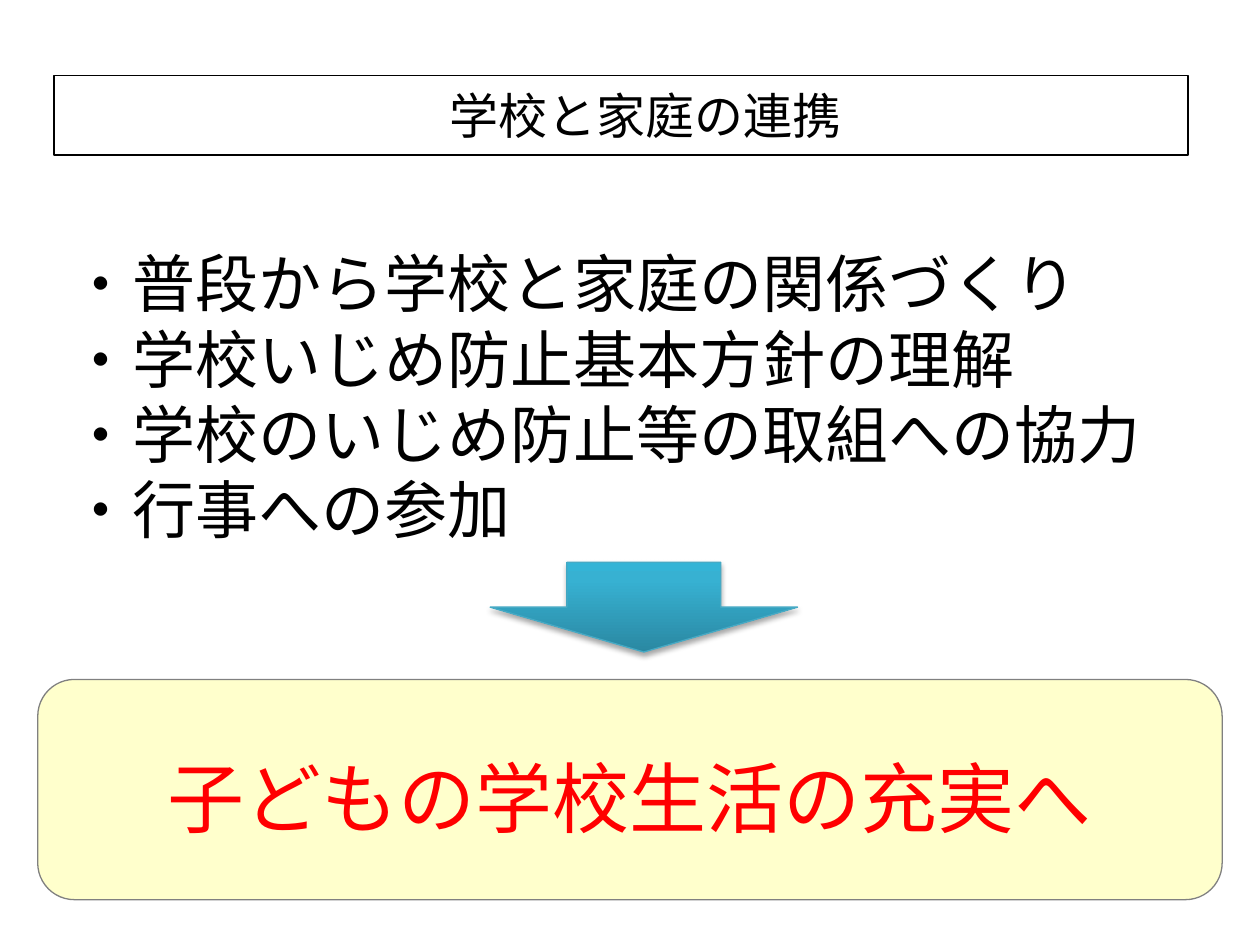
from lxml.etree import SubElement as Sub
from pptx import Presentation
from pptx.dml.color import RGBColor as Rgb
from pptx.enum.shapes import MSO_SHAPE as Kind
from pptx.enum.text import MSO_ANCHOR as Anchor, PP_ALIGN as Align
from pptx.oxml.ns import qn
from pptx.util import Inches, Pt

WIDE, HIGH = Inches(10), Inches(7.5)
FONT = "Noto Sans CJK JP"
HUE = {
    "ink": "000000", "red": "FF0000", "cream": "FFFFCC", "gray": "808080",
    "deep": "2A88A2", "mid": "37B1D2", "light": "34B4D6", "edge": "46AAC5",
}
ITEMS = [
    "・普段から学校と家庭の関係づくり",
    "・学校いじめ防止基本方針の理解",
    "・学校のいじめ防止等の取組への協力",
    "・行事への参加",
]


def tint(name):
    """Return the named colour."""
    return Rgb.from_string(HUE[name])


def shape(slide, kind, box, fill=None, line=None):
    """Add a shape in a box given as shares of the slide."""
    x, y, w, h = box
    item = slide.shapes.add_shape(
        kind, int(x * WIDE), int(y * HIGH), int(w * WIDE), int(h * HIGH))
    item.shadow.inherit = False
    if fill:
        item.fill.solid()
        item.fill.fore_color.rgb = tint(fill)
    else:
        item.fill.background()
    if line:
        item.line.color.rgb = tint(line)
        item.line.width = Pt(0.75)
    else:
        item.line.fill.background()
    return item


def write(item, rows, size, pitch, color="ink", align=Align.CENTER, anchor=Anchor.TOP):
    """Fill a shape with paragraphs of one style."""
    frame = item.text_frame
    frame.word_wrap = True
    frame.vertical_anchor = anchor
    frame.text = "\n".join(rows)
    for para in frame.paragraphs:
        para.alignment = align
        para.line_spacing = Pt(pitch)
        para.font.size = Pt(size)
        para.font.color.rgb = tint(color)
        para.font.name = FONT
        Sub(para._p.pPr.find(qn("a:defRPr")), qn("a:ea"), typeface=FONT)


def title(slide, box):
    """Place the framed heading."""
    item = shape(slide, Kind.RECTANGLE, box, line="ink")
    write(item, ["　学校と家庭の連携"], 28, 36)


def points(slide, box):
    """Place the list of actions."""
    item = shape(slide, Kind.ROUNDED_RECTANGLE, box)
    item.text_frame.margin_top = Inches(0.09)
    write(item, ITEMS, 36, 43, align=Align.LEFT)


def goal(slide, box):
    """Place the closing message."""
    item = shape(slide, Kind.ROUNDED_RECTANGLE, box, "cream", "gray")
    write(item, ["子どもの学校生活の充実へ"], 44, 61, "red", anchor=Anchor.MIDDLE)


def arrow(slide, box):
    """Place the shaded arrow with its soft shadow."""
    item = shape(slide, Kind.DOWN_ARROW, box, line="edge")
    item.fill.gradient()
    item.fill.gradient_angle = 90
    props = item._element.spPr
    stops = props.find(qn("a:gradFill")).find(qn("a:gsLst"))
    for old in list(stops):
        stops.remove(old)
    for name, pos in (("deep", 0), ("mid", 80), ("light", 100)):
        stop = Sub(stops, qn("a:gs"), pos=str(pos * 1000))
        Sub(stop, qn("a:srgbClr"), val=HUE[name])
    shade = Sub(props.find(qn("a:effectLst")), qn("a:outerShdw"),
                blurRad=str(Pt(3.1)), dist=str(Pt(1.8)),
                dir="5400000", rotWithShape="0")
    Sub(Sub(shade, qn("a:srgbClr"), val=HUE["ink"]), qn("a:alpha"), val="35000")


def main():
    """Build and save the slide."""
    deck = Presentation()
    deck.slide_width, deck.slide_height = WIDE, HIGH
    slide = deck.slides.add_slide(deck.slide_layouts[6])
    title(slide, (0.043, 0.08, 0.9, 0.084))
    points(slide, (0.03, 0.227, 0.94, 0.42))
    goal(slide, (0.03, 0.719, 0.94, 0.233))
    arrow(slide, (0.389, 0.595, 0.244, 0.095))
    deck.save("out.pptx")


if __name__ == "__main__":
    main()
